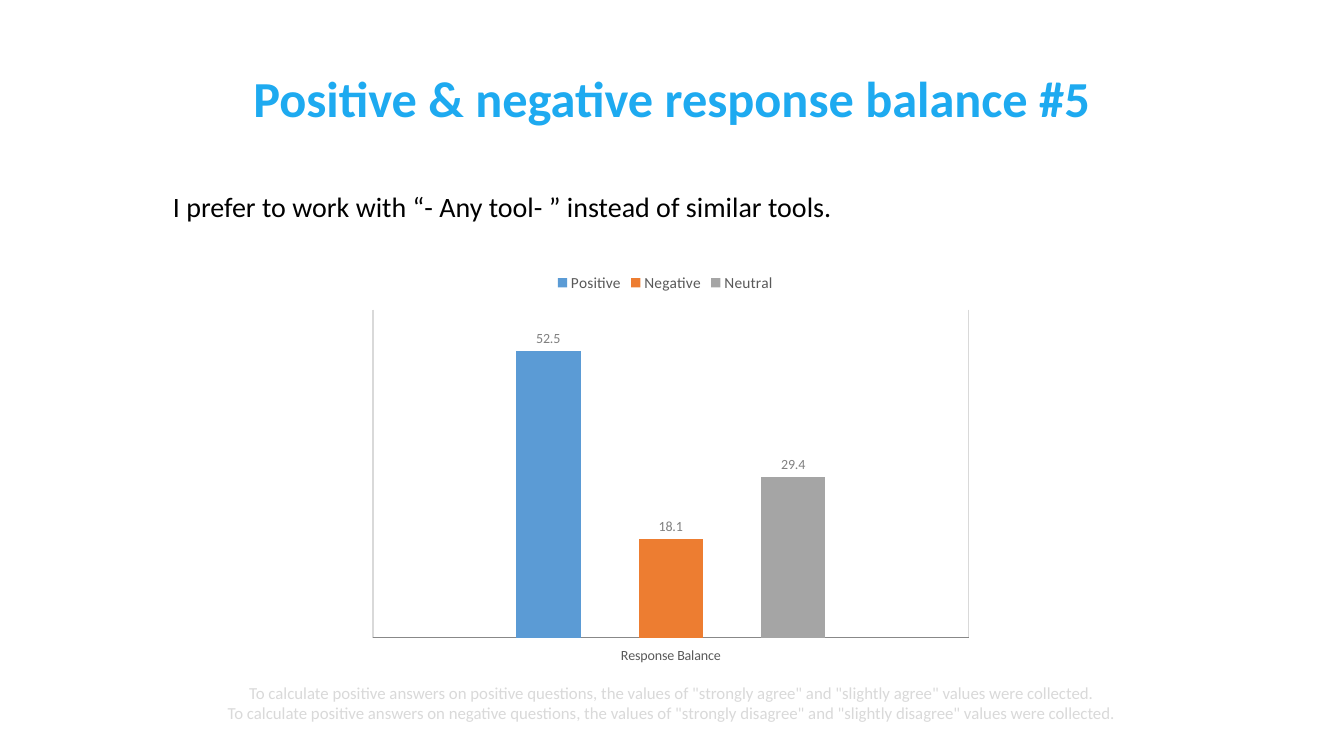
"""Build a slide with a column chart of positive, negative and neutral responses."""
from lxml import etree
from pptx import Presentation
from pptx import util as u
from pptx.chart.data import CategoryChartData
from pptx.dml.color import RGBColor
from pptx.enum import chart as kinds, text
from pptx.oxml.ns import qn

BLUE = RGBColor(0x1E, 0xAA, 0xF0)
BLACK = RGBColor(0, 0, 0)
PALE = RGBColor(0xD9, 0xD9, 0xD9)
AXIS = RGBColor(0x88, 0x88, 0x88)
LABEL = RGBColor(0x80, 0x80, 0x80)
DARK = RGBColor(0x59, 0x59, 0x59)
RESPONSES = [
    ("Positive", 52.5, RGBColor(0x5B, 0x9B, 0xD5)),
    ("Negative", 18.1, RGBColor(0xED, 0x7D, 0x31)),
    ("Neutral", 29.4, RGBColor(0xA5, 0xA5, 0xA5)),
]


def style(font, size, color, bold=False):
    font.name, font.size, font.bold = "Calibri", u.Pt(size), bold
    font.color.rgb = color


def add_text(lines, at, size, color, bold=False, align=text.PP_ALIGN.CENTER,
             anchor=text.MSO_ANCHOR.MIDDLE, spacing=1.0, before=0):
    box = page.shapes.add_textbox(*[u.Pt(length) for length in at])
    frame = box.text_frame
    frame.word_wrap = True
    frame.vertical_anchor = anchor
    frame.margin_left = frame.margin_right = u.Pt(3.6)
    frame.margin_top = frame.margin_bottom = u.Pt(3.6)
    for index, line in enumerate(lines):
        para = frame.add_paragraph() if index else frame.paragraphs[0]
        para.alignment = align
        para.line_spacing = spacing
        para.space_before = u.Pt(before)
        span = para.add_run()
        span.text = line
        style(span.font, size, color, bold)


deck = Presentation()
deck.slide_width, deck.slide_height = u.Pt(960), u.Pt(540)
page = deck.slides.add_slide(deck.slide_layouts[6])

add_text([
    'To calculate positive answers on positive questions, the values of "strongly agree" '
    'and "slightly agree" values were collected.',
    'To calculate positive answers on negative questions, the values of "strongly disagree" '
    'and "slightly disagree" values were collected.',
], (3.6, 484.5, 952.6, 34.6), 12, PALE)
add_text(["Positive & negative response balance #5"], (120, 48.2, 720, 46.8), 36, BLUE,
         bold=True, anchor=text.MSO_ANCHOR.BOTTOM, spacing=0.9)
add_text(["I prefer to work with “- Any tool- ” instead of similar tools."],
         (120, 120.2, 720, 108), 20, BLACK, align=text.PP_ALIGN.LEFT,
         anchor=text.MSO_ANCHOR.TOP, spacing=1.5, before=10)

data = CategoryChartData(number_format="0.#")
data.categories = ["Response Balance"]
for name, value, color in RESPONSES:
    data.add_series(name, [value])
chart = page.shapes.add_chart(
    kinds.XL_CHART_TYPE.COLUMN_CLUSTERED,
    u.Pt(256.3), u.Pt(187.2), u.Pt(437.8), u.Pt(286.6), data).chart
style(chart.font, 10, BLACK)
chart.has_title = False
chart.has_legend = True
chart.legend.position = kinds.XL_LEGEND_POSITION.TOP
chart.legend.include_in_layout = True
style(chart.legend.font, 11, DARK)

plot = chart.plots[0]
plot.gap_width, plot.overlap = 444, -90
plot.vary_by_categories = False
for series, (name, value, color) in zip(plot.series, RESPONSES):
    series.format.fill.solid()
    series.format.fill.fore_color.rgb = color
    labels = series.data_labels
    labels.show_value = True
    labels.position = kinds.XL_LABEL_POSITION.OUTSIDE_END
    labels.number_format, labels.number_format_is_linked = "0.#", False
    style(labels.font, 10, LABEL)

categories = chart.category_axis
categories.major_tick_mark = kinds.XL_TICK_MARK.NONE
categories.tick_label_position = kinds.XL_TICK_LABEL_POSITION.LOW
categories.has_major_gridlines = True
style(categories.tick_labels.font, 10, DARK)
for line, color in [(categories.format.line, AXIS),
                    (categories.major_gridlines.format.line, PALE)]:
    line.width = u.Pt(1)
    line.color.rgb = color

values = chart.value_axis
values.minimum_scale, values.maximum_scale, values.major_unit = 0, 60, 15
values.has_major_gridlines = False
values.major_tick_mark = kinds.XL_TICK_MARK.NONE
values.tick_label_position = kinds.XL_TICK_LABEL_POSITION.NONE
values.tick_labels.number_format = "0.#"
values.tick_labels.number_format_is_linked = False
values.format.line.fill.background()

area = chart.element.find(".//" + qn("c:plotArea"))
for old in area.findall(qn("c:layout")):
    area.remove(old)
layout = etree.Element(qn("c:layout"))
area.insert(0, layout)
manual = etree.SubElement(layout, qn("c:manualLayout"))
for tag, setting in [("layoutTarget", "inner"), ("xMode", "edge"), ("yMode", "edge"),
                     ("x", "0.023"), ("y", "0.119"), ("w", "0.972"), ("h", "0.819")]:
    etree.SubElement(manual, qn("c:" + tag), val=setting)

deck.save("out.pptx")
